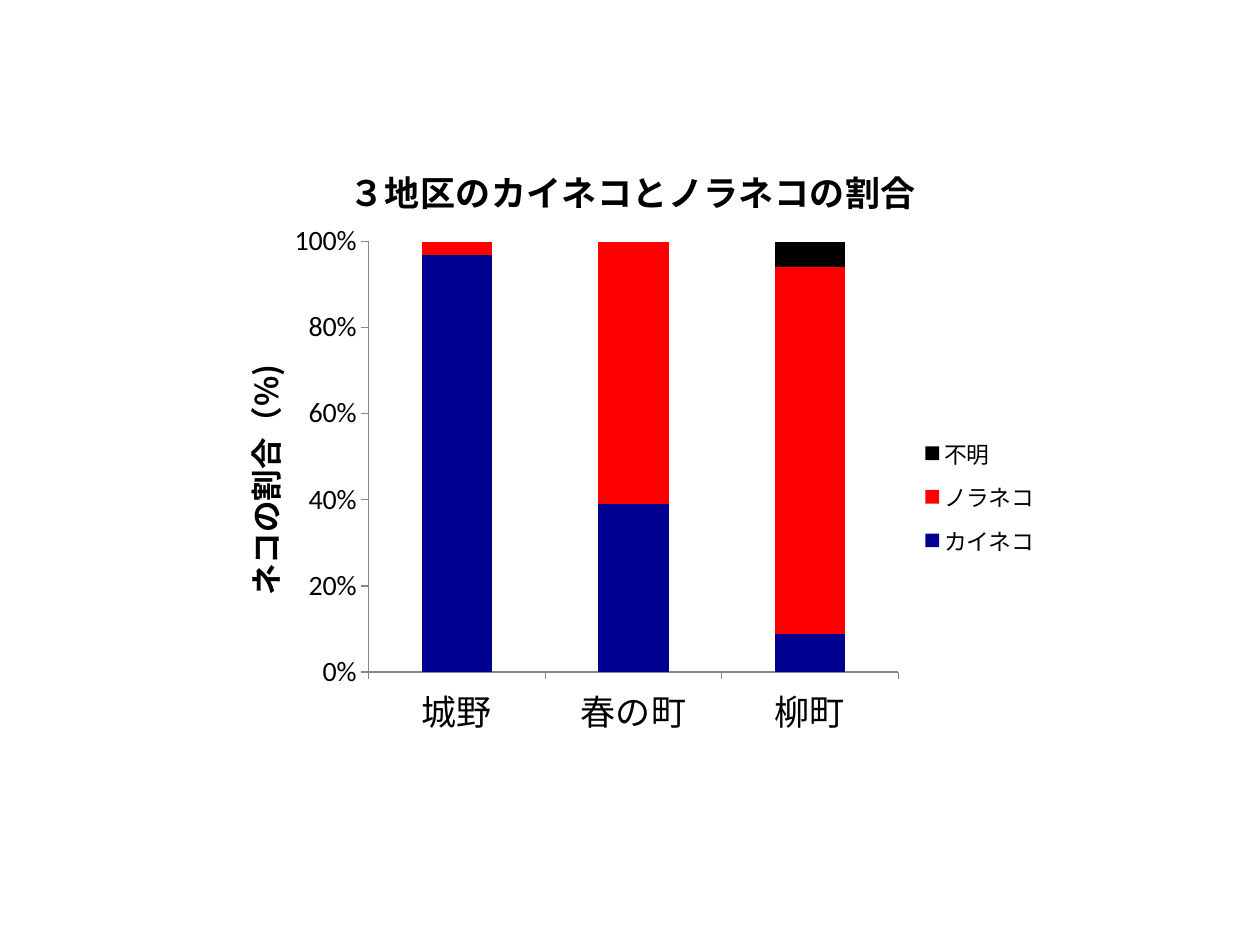
from dataclasses import dataclass

from lxml import etree
from pptx import Presentation
from pptx import util as u
from pptx.chart.data import CategoryChartData
from pptx.dml.color import RGBColor
from pptx.enum import chart as ch
from pptx.oxml.ns import qn


@dataclass(frozen=True)
class Theme:
    latin: str = "Calibri"
    japanese: str = "Noto Sans CJK JP"
    ink: str = "000000"
    axis: str = "878787"
    base: int = 10
    legend: int = 13
    value: int = 16
    axis_title: int = 18
    heading: int = 20


THEME = Theme()
DISTRICTS = ["城野", "春の町", "柳町"]
CATS = [
    ("カイネコ", (97, 39, 9), "000090"),
    ("ノラネコ", (3, 61, 86), "FF0000"),
    ("不明", (0, 0, 6), "000000"),
]


def set_attrs(obj, **values):
    for name, value in values.items():
        setattr(obj, name, value)


def style_font(font, size, name=THEME.japanese, bold=False):
    set_attrs(font, size=u.Pt(size), name=name, bold=bold)
    font.color.rgb = RGBColor.from_string(THEME.ink)
    latin = font._element.find(qn("a:latin"))
    ea = etree.Element(qn("a:ea"), typeface=THEME.japanese)
    latin.addnext(ea)


def place(element, inner=False, **box):
    for old in element.findall(qn("c:layout")):
        element.remove(old)
    layout = etree.Element(qn("c:layout"))
    manual = etree.SubElement(layout, qn("c:manualLayout"))
    values = {"layoutTarget": "inner"} if inner else {}
    values.update(xMode="edge", yMode="edge", **box)
    for tag, value in values.items():
        etree.SubElement(manual, qn(f"c:{tag}"), val=str(value))
    before = [e for e in element if e.tag in (qn("c:tx"), qn("c:legendPos"))]
    element.insert(len(before), layout)


def add_title(owner, words, size, x, y):
    title = owner.chart_title if hasattr(owner, "chart_title") else owner.axis_title
    p = title.text_frame.paragraphs[0]
    r = p.add_run()
    r.text = words
    style_font(r.font, size, bold=True)
    place(title._element, x=x, y=y)


def style_axis(axis, size, name):
    set_attrs(axis, has_major_gridlines=False,
              major_tick_mark=ch.XL_TICK_MARK.OUTSIDE,
              minor_tick_mark=ch.XL_TICK_MARK.NONE)
    axis.format.line.color.rgb = RGBColor.from_string(THEME.axis)
    axis.format.line.width = u.Pt(0.75)
    style_font(axis.tick_labels.font, size, name)


def add_cat_chart(s):
    data = CategoryChartData()
    data.categories = DISTRICTS
    for name, values, _ in CATS:
        data.add_series(name, values)
    box = [u.Inches(n) for n in (1.57, 1.04, 6.78, 4.88)]
    chart = s.shapes.add_chart(ch.XL_CHART_TYPE.COLUMN_STACKED_100, *box, data).chart
    style_font(chart.font, THEME.base, THEME.latin)

    plot = chart.plots[0]
    set_attrs(plot, gap_width=150, overlap=100, vary_by_categories=False)
    for series, (_, _, color) in zip(plot.series, CATS):
        series.format.fill.solid()
        series.format.fill.fore_color.rgb = RGBColor.from_string(color)
    place(chart._chartSpace.chart.plotArea, inner=True, x=0.2, y=0.18, w=0.62, h=0.7)
    return chart


def style_axes(chart):
    style_axis(chart.category_axis, THEME.heading, THEME.japanese)
    axis = chart.value_axis
    style_axis(axis, THEME.value, THEME.latin)
    set_attrs(axis, minimum_scale=0, maximum_scale=1, major_unit=0.2)
    set_attrs(axis.tick_labels, number_format="0%", number_format_is_linked=False)
    add_title(axis, "ネコの割合（%)", THEME.axis_title, 0.04, 0.37)


def add_legend(chart):
    chart.has_legend = True
    set_attrs(chart.legend, position=ch.XL_LEGEND_POSITION.RIGHT, include_in_layout=False)
    style_font(chart.legend.font, THEME.legend)
    place(chart.legend._element, x=0.83, y=0.48, w=0.17, h=0.23)


def main():
    prs = Presentation()
    set_attrs(prs, slide_width=u.Inches(10), slide_height=u.Inches(7.5))
    s = prs.slides.add_slide(prs.slide_layouts[6])
    chart = add_cat_chart(s)
    add_title(chart, "３地区のカイネコとノラネコの割合", THEME.heading, 0.17, 0.04)
    style_axes(chart)
    add_legend(chart)
    prs.save("out.pptx")


if __name__ == "__main__":
    main()
